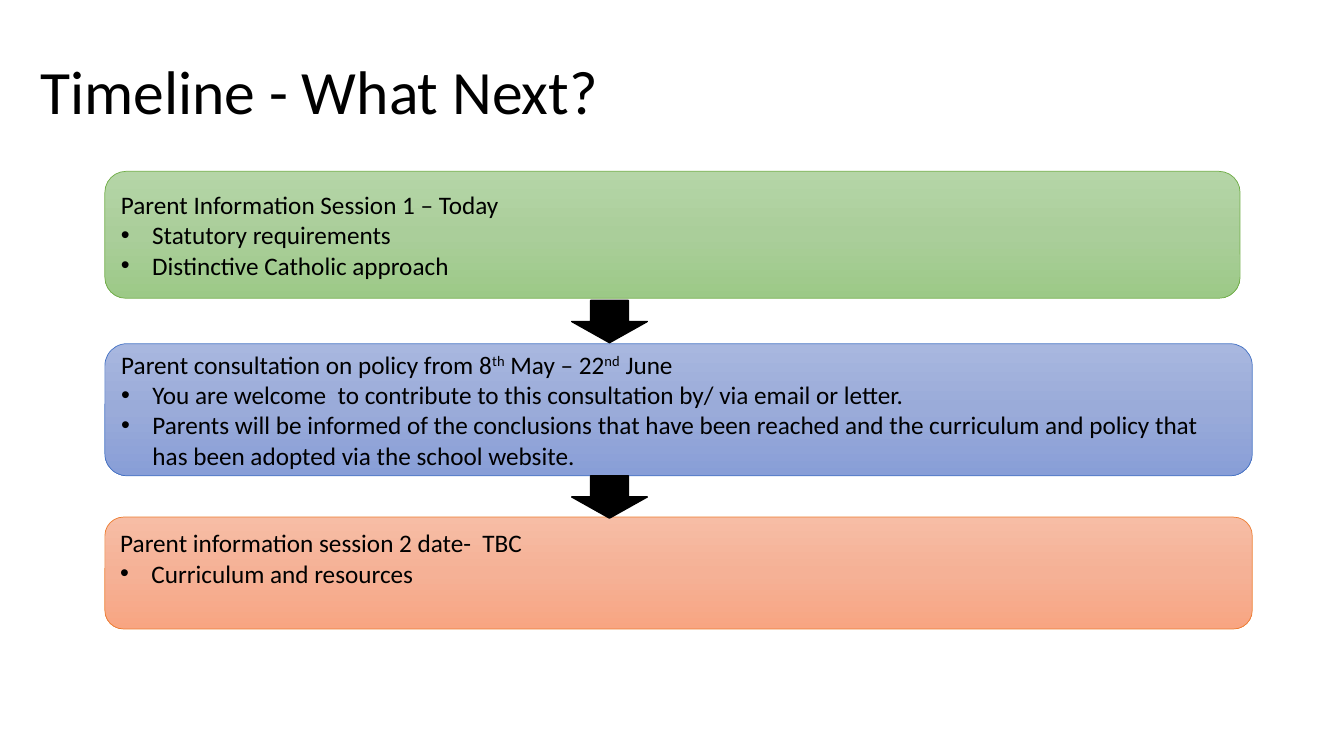
from copy import deepcopy
from dataclasses import dataclass

from lxml.etree import SubElement
from pptx import Presentation
from pptx.dml.color import RGBColor
from pptx.enum.shapes import MSO_SHAPE
from pptx.enum.text import MSO_ANCHOR, PP_ALIGN
from pptx.oxml.ns import qn
from pptx.util import Inches, Pt


@dataclass(frozen=True)
class Theme:
    """Font, type sizes and colours; a stage has three gradient stops and a line."""
    font: str = "Calibri"
    title_size: int = 44
    body_size: int = 18
    ink: str = "000000"
    green: tuple = ("B5D5A7", "AACE9A", "9CC987", "70AD47")
    blue: tuple = ("A8B7DF", "9AABD9", "889ED7", "4472C4")
    orange: tuple = ("F7BDA5", "F5B196", "F8A582", "ED7D31")


def write(para, text, *, font, size, color, bullet=False, spacing=None):
    """Fill a paragraph; text between carets is superscript."""
    para.alignment = PP_ALIGN.LEFT
    if spacing:
        para.line_spacing = spacing
    if bullet:
        properties = para._p.get_or_add_pPr()
        properties.set("marL", str(Inches(0.31)))
        properties.set("indent", str(-Inches(0.31)))
        SubElement(properties, qn("a:buFont"), typeface="Arial")
        SubElement(properties, qn("a:buChar"), char="•")
    for index, part in enumerate(text.split("^")):
        span = para.add_run()
        span.text = part
        span.font.name = font
        span.font.size = Pt(size)
        span.font.color.rgb = RGBColor.from_string(color)
        if index % 2:
            span._r.get_or_add_rPr().set("baseline", "30000")


class TimelineSlide:
    """Draws the timeline elements on one slide in one style."""

    def __init__(self, page, theme):
        self.page = page
        self.theme = theme

    def title(self, text, left, top, width, height):
        """Add the slide heading."""
        box = self.page.shapes.add_textbox(*map(Inches, (left, top, width, height)))
        frame = box.text_frame
        frame.word_wrap = True
        frame.vertical_anchor = MSO_ANCHOR.MIDDLE
        write(frame.paragraphs[0], text, font=self.theme.font,
              size=self.theme.title_size, color=self.theme.ink, spacing=0.9)

    def shape(self, kind, left, top, width, height, line, line_width):
        """Add a preset shape with an outline and no shadow."""
        shape = self.page.shapes.add_shape(kind, *map(Inches, (left, top, width, height)))
        shape.shadow.inherit = False
        shape.line.color.rgb = RGBColor.from_string(line)
        shape.line.width = Pt(line_width)
        return shape

    def stage(self, lines, colors, left, top, width, height, bottom_inset=0.05):
        """Add a gradient box with a heading and bullets."""
        *stops, line = colors
        box = self.shape(MSO_SHAPE.ROUNDED_RECTANGLE, left, top, width, height, line, 0.5)
        box.fill.gradient()
        box.fill.gradient_angle = 270
        stop_list = next(box.element.iter(qn("a:gsLst")))
        stop_list.insert(1, deepcopy(stop_list[0]))
        for index, (stop, color) in enumerate(zip(box.fill.gradient_stops, stops)):
            stop.position = index / 2
            stop.color.rgb = RGBColor.from_string(color)
        frame = box.text_frame
        frame.word_wrap = True
        frame.vertical_anchor = MSO_ANCHOR.MIDDLE
        frame.margin_bottom = Inches(bottom_inset)
        for index, text in enumerate(lines):
            para = frame.add_paragraph() if index else frame.paragraphs[0]
            write(para, text, font=self.theme.font, size=self.theme.body_size,
                  color=self.theme.ink, bullet=index > 0)

    def arrow(self, left, top, width, height):
        """Add a solid arrow that points down."""
        arrow = self.shape(MSO_SHAPE.DOWN_ARROW, left, top, width, height, self.theme.ink, 1)
        arrow.fill.solid()
        arrow.fill.fore_color.rgb = RGBColor.from_string(self.theme.ink)


def main():
    """Build the timeline slide and save it."""
    deck = Presentation()
    deck.slide_width, deck.slide_height = Inches(13.33), Inches(7.5)
    theme = Theme()
    timeline = TimelineSlide(deck.slides.add_slide(deck.slide_layouts[6]), theme)

    timeline.title("Timeline - What Next?", 0.3, 0.21, 11.5, 1.45)
    timeline.stage(
        ["Parent Information Session 1 – Today",
         "Statutory requirements",
         "Distinctive Catholic approach"],
        theme.green, 1.04, 1.7, 11.26, 1.26)
    timeline.stage(
        ["Parent consultation on policy from 8^th^ May – 22^nd^ June",
         "You are welcome  to contribute to this consultation by/ via email or letter.",
         "Parents will be informed of the conclusions that have been reached and the "
         "curriculum and policy that has been adopted via the school website."],
        theme.blue, 1.04, 3.41, 11.38, 1.31)
    timeline.stage(
        ["Parent information session 2 date-  TBC",
         "Curriculum and resources"],
        theme.orange, 1.04, 5.13, 11.38, 1.11, bottom_inset=0.35)
    for top in (2.98, 4.72):
        timeline.arrow(5.67, top, 0.75, 0.42)

    deck.save("out.pptx")


if __name__ == "__main__":
    main()
